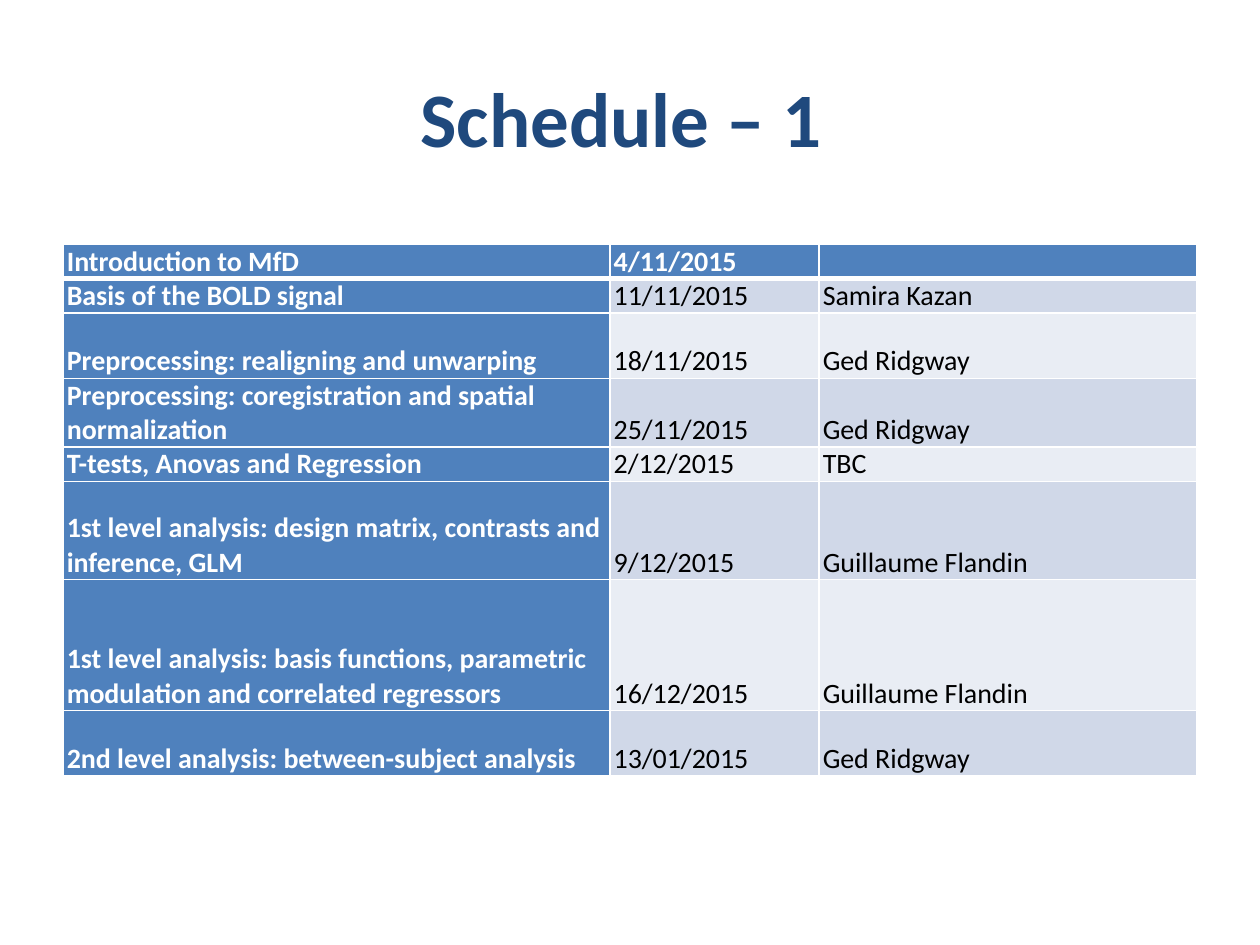
from lxml.etree import SubElement as Sub
from pptx import Presentation
from pptx.dml.color import RGBColor as RGB
from pptx.enum.text import MSO_ANCHOR as Anchor, PP_ALIGN as Align
from pptx.oxml.ns import qn
from pptx.util import Pt

COLORS = {"title": "1F497D", "head": "4F81BD", "odd": "D0D8E8",
          "even": "E9EDF4", "white": "FFFFFF", "black": "000000"}
UNIT = 18.72
WIDTHS = [312.5, 119.5, 216]
ROWS = [
    (1, "Introduction to MfD", "4/11/2015", ""),
    (1, "Basis of the BOLD signal", "11/11/2015", "Samira Kazan"),
    (2, "Preprocessing: realigning and unwarping", "18/11/2015", "Ged Ridgway"),
    (2, "Preprocessing: coregistration and spatial normalization",
     "25/11/2015", "Ged Ridgway"),
    (1, "T-tests, Anovas and Regression", "2/12/2015", "TBC"),
    (3, "1st level analysis: design matrix, contrasts and inference, GLM",
     "9/12/2015", "Guillaume Flandin"),
    (4, "1st level analysis: basis functions, parametric modulation and "
     "correlated regressors", "16/12/2015", "Guillaume Flandin"),
    (2, "2nd level analysis: between-subject analysis",
     "13/01/2015", "Ged Ridgway"),
]
CELL = {"margin_left": Pt(2.2), "margin_right": Pt(2.2), "margin_top": 0,
        "margin_bottom": 0, "vertical_anchor": Anchor.BOTTOM}


def style(run, size, color, bold):
    for key, value in {"name": "Calibri", "size": Pt(size), "bold": bold}.items():
        setattr(run.font, key, value)
    run.font.color.rgb = RGB.from_string(COLORS[color])


def border(cell, sides):
    props = cell._tc.get_or_add_tcPr()
    for side, width in sides.items():
        line = Sub(props, qn("a:ln" + side), w=str(Pt(width)))
        fill = Sub(line, qn("a:solidFill"))
        Sub(fill, qn("a:srgbClr"), val=COLORS["white"])


deck = Presentation()
deck.slide_width, deck.slide_height = Pt(720), Pt(540)
slide = deck.slides.add_slide(deck.slide_layouts[5])

title = slide.shapes.title
box = {"left": 36, "top": 21.6, "width": 648, "height": 90}
for key, value in box.items():
    setattr(title, key, Pt(value))
title.text_frame.vertical_anchor = Anchor.MIDDLE
para = title.text_frame.paragraphs[0]
para.alignment = Align.CENTER
run = para.add_run()
run.text = "Schedule – 1 "
style(run, 44, "title", True)

total = UNIT * sum(row[0] for row in ROWS)
table = slide.shapes.add_table(len(ROWS), len(WIDTHS), Pt(36), Pt(139.7),
                               Pt(sum(WIDTHS)), Pt(total)).table
for col, width in zip(table.columns, WIDTHS):
    col.width = Pt(width)

for i, (units, *texts) in enumerate(ROWS):
    table.rows[i].height = Pt(units * UNIT)
    for j, text in enumerate(texts):
        cell = table.cell(i, j)
        for key, value in CELL.items():
            setattr(cell, key, value)
        border(cell, {"L": 1, "R": 1, "T": 3 if i == 1 else 1,
                      "B": 3 if i == 0 else 1})
        head = i == 0 or j == 0
        band = "head" if head else "odd" if i % 2 else "even"
        cell.fill.solid()
        cell.fill.fore_color.rgb = RGB.from_string(COLORS[band])
        para = cell.text_frame.paragraphs[0]
        if text:
            run = para.add_run()
            run.text = text
            style(run, 16, "white" if head else "black", head)
        else:
            Sub(para._p, qn("a:endParaRPr"), sz="1600")

deck.save("out.pptx")
